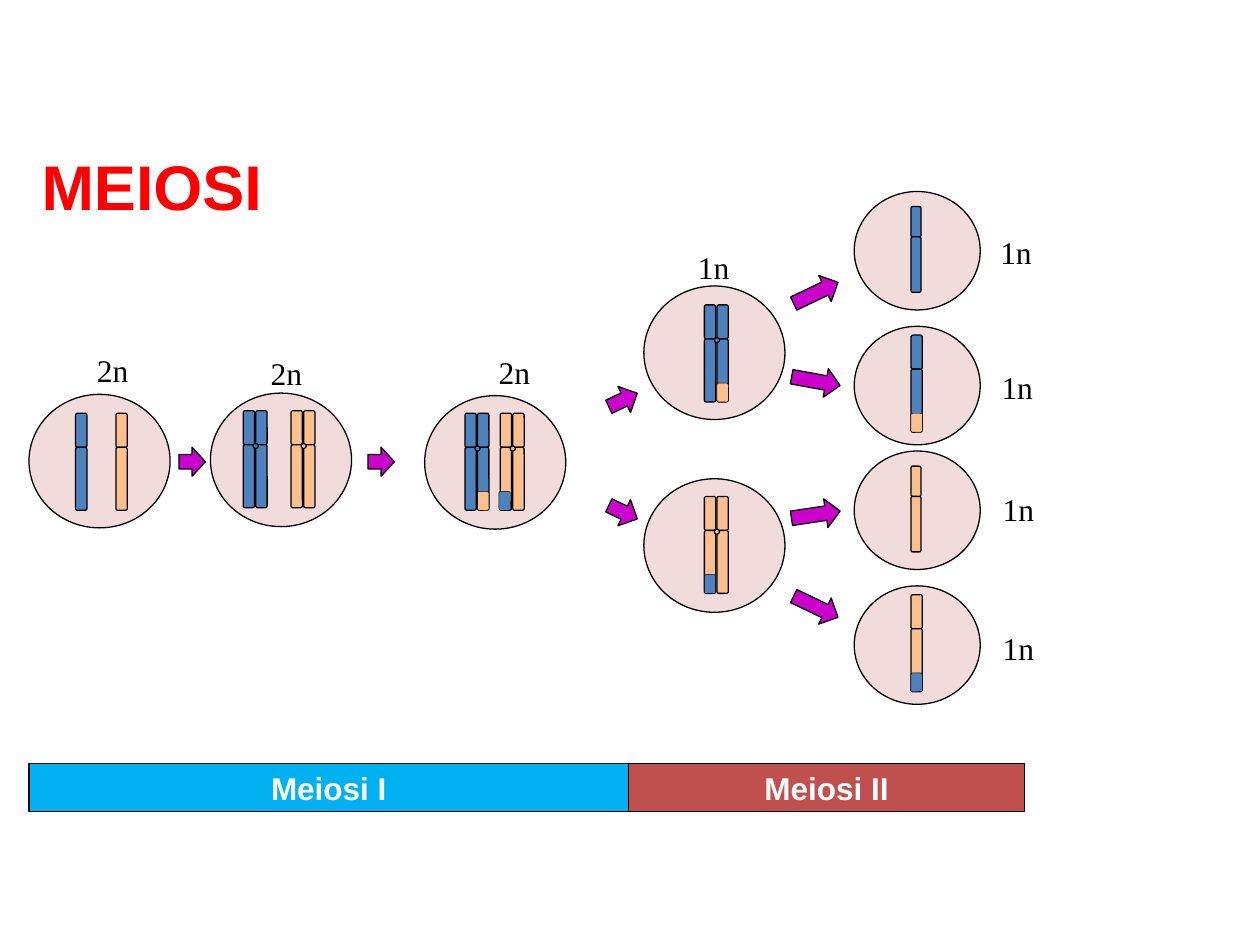
"""Build a slide that follows the chromosomes through meiosis I and II."""
from pptx import Presentation
from pptx.dml.color import RGBColor
from pptx.enum.shapes import MSO_SHAPE
from pptx.enum.text import MSO_ANCHOR, MSO_AUTO_SIZE, PP_ALIGN
from pptx.util import Inches, Pt

RECTANGLE = MSO_SHAPE.RECTANGLE
ROUNDED = MSO_SHAPE.ROUNDED_RECTANGLE
ELLIPSE = MSO_SHAPE.OVAL
ARROW = MSO_SHAPE.RIGHT_ARROW
LEFT, CENTER = PP_ALIGN.LEFT, PP_ALIGN.CENTER
TOP, MIDDLE = MSO_ANCHOR.TOP, MSO_ANCHOR.MIDDLE
FIT, FIXED = MSO_AUTO_SIZE.SHAPE_TO_FIT_TEXT, MSO_AUTO_SIZE.NONE

BLUE, ORANGE = "4F81BD", "FAC090"
LARGE_CELL, SMALL_CELL = (1.12, 1.06), (1, 0.94)
LARGE_ARMS, SMALL_ARMS = (0.09, 0.27, 0.5), (0.08, 0.24, 0.44)

PHASES = [("Meiosi I", 0.23, 4.76, "00B0F0"), ("Meiosi II", 4.99, 3.14, "C0504D")]
CELLS = [(LARGE_CELL, [(0.23, 3.13), (1.67, 3.12), (3.37, 3.14), (5.11, 2.27), (5.11, 3.8)]),
         (SMALL_CELL, [(6.78, 1.52), (6.78, 2.59), (6.78, 3.58), (6.78, 4.65)])]
SINGLES = [(0.6, 3.28, BLUE, LARGE_ARMS), (0.92, 3.28, ORANGE, LARGE_ARMS),
           (7.23, 1.64, BLUE, SMALL_ARMS), (7.23, 2.66, BLUE, LARGE_ARMS),
           (7.23, 3.7, ORANGE, SMALL_ARMS), (7.23, 4.72, ORANGE, LARGE_ARMS)]
PAIRS = [(1.93, 3.26, BLUE), (2.31, 3.26, ORANGE), (3.69, 3.28, BLUE),
         (3.97, 3.28, ORANGE), (5.59, 2.42, BLUE), (5.59, 3.94, ORANGE)]
CROSSOVERS = [(3.79, 3.9, ORANGE), (3.96, 3.9, BLUE), (5.69, 3.04, ORANGE),
              (5.59, 4.56, BLUE), (7.23, 3.28, ORANGE), (7.23, 5.34, BLUE)]
ARROWS = [(1.42, 3.55, 0.21, 0), (2.92, 3.55, 0.21, 0),
          (4.82, 3.06, 0.25, -25.6), (4.82, 3.95, 0.25, 25.6),
          (6.28, 2.21, 0.39, -25.6), (6.28, 2.91, 0.39, 10.3),
          (6.28, 3.97, 0.39, -8.5), (6.28, 4.7, 0.39, 25.6)]
LABELS = [("2n", 0.67, 2.74), ("2n", 2.05, 2.76), ("2n", 3.86, 2.75), ("1n", 5.44, 1.92),
          ("1n", 7.84, 1.8), ("1n", 7.85, 2.87), ("1n", 7.86, 3.84), ("1n", 7.86, 4.94)]


def color(value):
    """Turn a hex string into a colour."""
    return RGBColor.from_string(value)


def write(shape, text, size=18, font="Arial", ink="000000", bold=False,
          align=LEFT, anchor=TOP, fit=FIT):
    """Put one formatted line of text into a shape."""
    frame = shape.text_frame
    frame.text = text
    frame.word_wrap = False
    frame.auto_size = fit
    frame.vertical_anchor = anchor
    paragraph = frame.paragraphs[0]
    paragraph.alignment = align
    paragraph.font.size = Pt(size)
    paragraph.font.name = font
    paragraph.font.bold = bold
    paragraph.font.color.rgb = color(ink)


class MeiosisSlide:
    """Hold the slide and the style of its elements."""

    outline = "000000"
    cell_fill = "F2DCDB"
    arrow_fill = "CC00CC"

    def __init__(self, presentation):
        """Add a title-only slide."""
        self.slide = presentation.slides.add_slide(presentation.slide_layouts[5])

    def title(self, text, left, top, width, height):
        """Place and format the title."""
        title = self.slide.shapes.title
        title.left, title.top = Inches(left), Inches(top)
        title.width, title.height = Inches(width), Inches(height)
        write(title, text, size=36, ink="FF0000", bold=True)

    def shape(self, kind, left, top, width, height, fill, line=0.75, parent=None):
        """Add a filled and outlined preset shape."""
        shapes = (parent or self.slide).shapes
        shape = shapes.add_shape(kind, Inches(left), Inches(top), Inches(width), Inches(height))
        shape.shadow.inherit = False
        shape.fill.solid()
        shape.fill.fore_color.rgb = color(fill)
        shape.line.color.rgb = color(self.outline)
        shape.line.width = Pt(line)
        return shape

    def phase(self, text, left, width, fill):
        """Add one bar of the phase strip."""
        bar = self.shape(RECTANGLE, left, 6.06, width, 0.38, fill)
        write(bar, text, ink="FFFFFF", bold=True, align=CENTER, anchor=MIDDLE, fit=FIXED)

    def cell(self, left, top, size):
        """Add a cell."""
        self.shape(ELLIPSE, left, top, *size, self.cell_fill)

    def chromatid(self, left, top, fill, arms=LARGE_ARMS, group=None):
        """Add the short and the long arm of a chromatid."""
        group = group or self.slide.shapes.add_group_shape()
        width, short, long = arms
        self.shape(ROUNDED, left, top, width, short, fill, parent=group)
        self.shape(ROUNDED, left, top + short, width, long, fill, parent=group)

    def pair(self, left, top, fill):
        """Add two sister chromatids joined by a centromere."""
        group = self.slide.shapes.add_group_shape()
        for offset in (0, 0.1):
            self.chromatid(left + offset, top, fill, group=group)
        self.shape(ELLIPSE, left + 0.08, top + 0.26, 0.04, 0.04, fill, parent=group)

    def crossover(self, left, top, fill):
        """Add an exchanged chromatid tip."""
        self.shape(ROUNDED, left, top, 0.09, 0.15, fill, line=0.25)

    def arrow(self, left, top, width, angle):
        """Add a block arrow turned by an angle."""
        self.shape(ARROW, left, top, width, 0.23, self.arrow_fill).rotation = angle

    def label(self, text, left, top):
        """Add a ploidy label."""
        box = self.slide.shapes.add_textbox(Inches(left), Inches(top), Inches(0.45), Inches(0.4))
        write(box, text, font="Times New Roman")


def main():
    """Build and save the presentation."""
    presentation = Presentation()
    presentation.slide_width, presentation.slide_height = Inches(10), Inches(7.5)
    meiosis = MeiosisSlide(presentation)
    meiosis.title("MEIOSI", 0.23, 1.12, 1.97, 0.71)
    for phase in PHASES:
        meiosis.phase(*phase)
    for size, positions in CELLS:
        for left, top in positions:
            meiosis.cell(left, top, size)
    for single in SINGLES:
        meiosis.chromatid(*single)
    for pair in PAIRS:
        meiosis.pair(*pair)
    for crossover in CROSSOVERS:
        meiosis.crossover(*crossover)
    for arrow in ARROWS:
        meiosis.arrow(*arrow)
    for label in LABELS:
        meiosis.label(*label)
    presentation.save("out.pptx")


if __name__ == "__main__":
    main()
